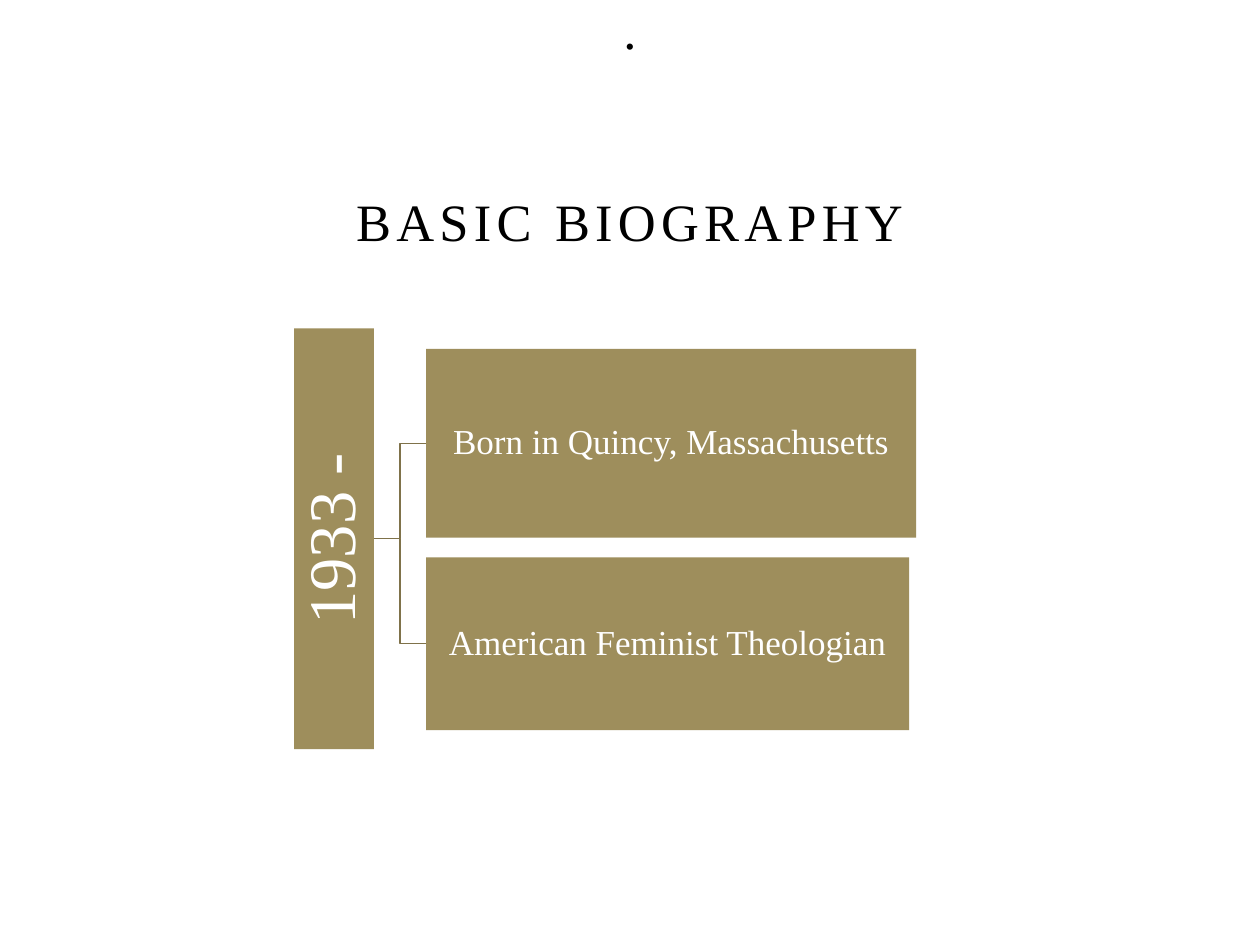
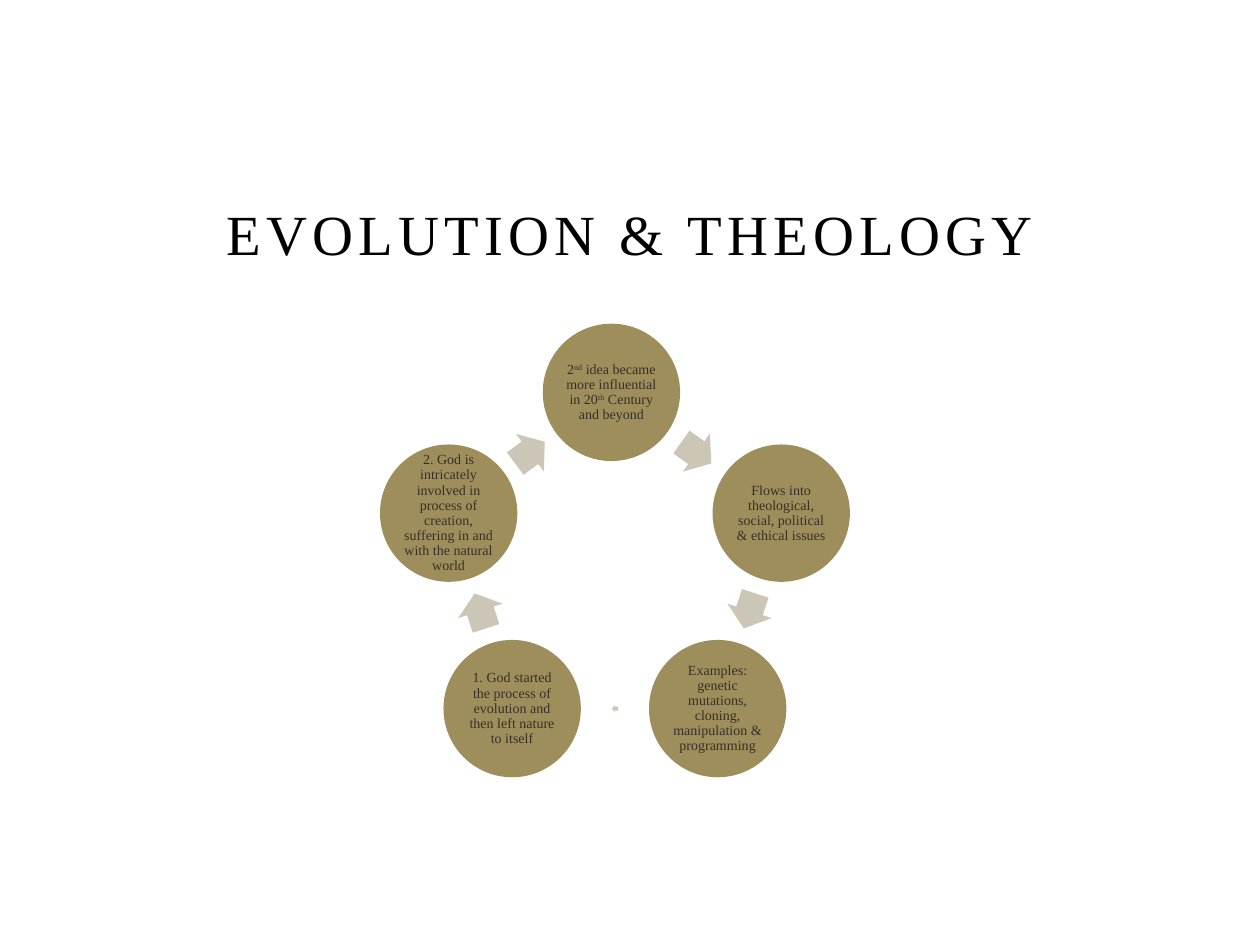
from dataclasses import dataclass
from itertools import pairwise
from math import atan2, cos, degrees, radians, sin
from typing import Any

from lxml.etree import SubElement
from pptx import Presentation
from pptx.dml.color import RGBColor
from pptx.enum.shapes import MSO_CONNECTOR, MSO_SHAPE
from pptx.enum.text import MSO_ANCHOR, PP_ALIGN
from pptx.oxml.ns import qn
from pptx.shapes.autoshape import Shape
from pptx.slide import Slide
from pptx.util import Pt

FONT = "Times New Roman"
BLACK, WHITE, BROWN = "000000", "FFFFFF", "37302A"
GOLD, GOLD_LINE, STONE = "9E8E5C", "7F724A", "CCC6B6"
RAISED = "^"

TITLE_FRAME = {"word_wrap": True, "vertical_anchor": MSO_ANCHOR.BOTTOM}


@dataclass(frozen=True)
class TextStyle:
    """Size, colour and inner margin of a filled shape's text."""
    size: float
    color: str
    margin: float = 0.72


@dataclass(frozen=True)
class Block:
    """A filled shape with its frame in points and its text."""
    left: float
    top: float
    width: float
    height: float
    text: str = ""
    style: TextStyle = TextStyle(20, WHITE)
    kind: MSO_SHAPE = MSO_SHAPE.RECTANGLE
    fill: str = GOLD
    rotation: float = 0


@dataclass(frozen=True)
class Stage:
    """One circle of the cycle and the size of the arrow leaving it."""
    text: str
    nudge: float = 0
    arrow_length: float = 21
    arrow_width: float = 26.6


YEAR_STYLE = TextStyle(38, WHITE, 2.16)
STAGE_STYLE = TextStyle(8, BROWN)

YEAR_BAR = Block(70.6, 285.1, 240.4, 45.6, "1933 -", YEAR_STYLE, rotation=270)
FACTS = [
    Block(243.5, 199.4, 280, 107.8, "Born in Quincy, Massachusetts"),
    Block(243.5, 318.5, 276, 98.8, "American Feminist Theologian"),
]

RING_X, RING_Y, RING_RADIUS, CIRCLE_SIZE = 351.4, 324.1, 99.9, 78.5
STAGES = [
    Stage("2^nd^ idea became more influential in 20^th^ Century and beyond", nudge=-2),
    Stage("Flows into theological, social, political & ethical issues"),
    Stage("Examples: genetic mutations, cloning, manipulation & programming",
          arrow_length=3.6, arrow_width=3.6),
    Stage("1. God started the process of evolution and then left nature to itself"),
    Stage("2. God is intricately involved in process of creation, "
          "suffering in and with the natural world"),
]


def hex_color(value: str) -> RGBColor:
    """Turn a hex string into a colour."""
    return RGBColor.from_string(value)


def set_format(target: Any, values: dict[str, Any]) -> None:
    """Set each named attribute on the target."""
    for name, value in values.items():
        setattr(target, name, value)


def add_run(paragraph: Any, text: str, size: float, color: str, **extras: str) -> None:
    """Append a run in the shared font, with extra run attributes."""
    run = paragraph.add_run()
    run.text = text
    set_format(run.font, {"name": FONT, "size": Pt(size)})
    run.font.color.rgb = hex_color(color)
    for name, value in extras.items():
        run.font._rPr.set(name, value)


def add_title(slide: Slide, top: float, size: float, lines: list[str], gap: float = 0) -> None:
    """Add a spaced, centred title that sits on the bottom of its box."""
    frame = slide.shapes.add_textbox(Pt(108), Pt(top), Pt(504), Pt(54)).text_frame
    set_format(frame, TITLE_FRAME)
    for index, line in enumerate(lines):
        paragraph = frame.add_paragraph() if index else frame.paragraphs[0]
        paragraph.alignment = PP_ALIGN.CENTER
        if index:
            paragraph.space_before = Pt(gap)
        add_run(paragraph, line, size, BLACK, spc="300")


def add_block(slide: Slide, block: Block) -> Shape:
    """Draw a filled shape and its centred text."""
    shape = slide.shapes.add_shape(
        block.kind, Pt(block.left), Pt(block.top), Pt(block.width), Pt(block.height))
    shape.shadow.inherit = False
    shape.rotation = block.rotation
    shape.fill.solid()
    shape.fill.fore_color.rgb = hex_color(block.fill)
    shape.line.fill.background()
    if block.text:
        margin = Pt(block.style.margin)
        set_format(shape.text_frame, {
            "word_wrap": True, "vertical_anchor": MSO_ANCHOR.MIDDLE,
            "margin_left": margin, "margin_right": margin,
            "margin_top": margin, "margin_bottom": margin})
        paragraph = shape.text_frame.paragraphs[0]
        set_format(paragraph, {"alignment": PP_ALIGN.CENTER, "line_spacing": 0.9})
        for index, part in enumerate(block.text.split(RAISED)):
            extras = {"baseline": "30000"} if index % 2 else {}
            add_run(paragraph, part, block.style.size, block.style.color, **extras)
    return shape


def add_branch(slide: Slide, start_x: float, start_y: float, target: Shape) -> None:
    """Draw an elbow line from a point to the left side of a shape."""
    branch = slide.shapes.add_connector(
        MSO_CONNECTOR.ELBOW, Pt(start_x), Pt(start_y),
        target.left, target.top + target.height // 2)
    branch.end_connect(target, 1)
    branch.line.width = Pt(0.75)
    branch.line.color.rgb = hex_color(GOLD_LINE)
    SubElement(branch._element.spPr, qn("a:effectLst"))


def centred_block(x: float, y: float, width: float, height: float, **details: Any) -> Block:
    """Describe a block by its centre."""
    return Block(x - width / 2, y - height / 2, width, height, **details)


def build_biography(slide: Slide) -> None:
    """Build the year bar and the facts that branch from it."""
    add_title(slide, 93.6, 30, [".", "BASIC BIOGRAPHY"], gap=73.5)
    add_block(slide, YEAR_BAR)
    bar_right = YEAR_BAR.left + (YEAR_BAR.width + YEAR_BAR.height) / 2
    bar_middle = YEAR_BAR.top + YEAR_BAR.height / 2
    for fact in FACTS:
        add_branch(slide, bar_right, bar_middle, add_block(slide, fact))


def build_evolution(slide: Slide) -> None:
    """Build the ring of stages with an arrow between neighbours."""
    add_title(slide, 102.2, 32.4, ["EVOLUTION & THEOLOGY"])
    centres = []
    for index, stage in enumerate(STAGES):
        angle = radians(360 / len(STAGES) * index - 90)
        centre = (RING_X + RING_RADIUS * cos(angle) + stage.nudge,
                  RING_Y + RING_RADIUS * sin(angle))
        centres.append(centre)
        add_block(slide, centred_block(
            *centre, CIRCLE_SIZE, CIRCLE_SIZE, text=stage.text,
            style=STAGE_STYLE, kind=MSO_SHAPE.OVAL))
    for stage, (start, end) in zip(STAGES, pairwise(centres + centres[:1])):
        heading = degrees(atan2(end[1] - start[1], end[0] - start[0])) % 360
        arrow = add_block(slide, centred_block(
            (start[0] + end[0]) / 2, (start[1] + end[1]) / 2,
            stage.arrow_length, stage.arrow_width,
            kind=MSO_SHAPE.RIGHT_ARROW, fill=STONE, rotation=heading))
        arrow.adjustments[0] = 0.6
        arrow.adjustments[1] = 0.5


def main() -> None:
    """Build and save the presentation."""
    presentation = Presentation()
    set_format(presentation, {"slide_width": Pt(720), "slide_height": Pt(540)})
    for build in (build_biography, build_evolution):
        build(presentation.slides.add_slide(presentation.slide_layouts[6]))
    presentation.save("out.pptx")


if __name__ == "__main__":
    main()
